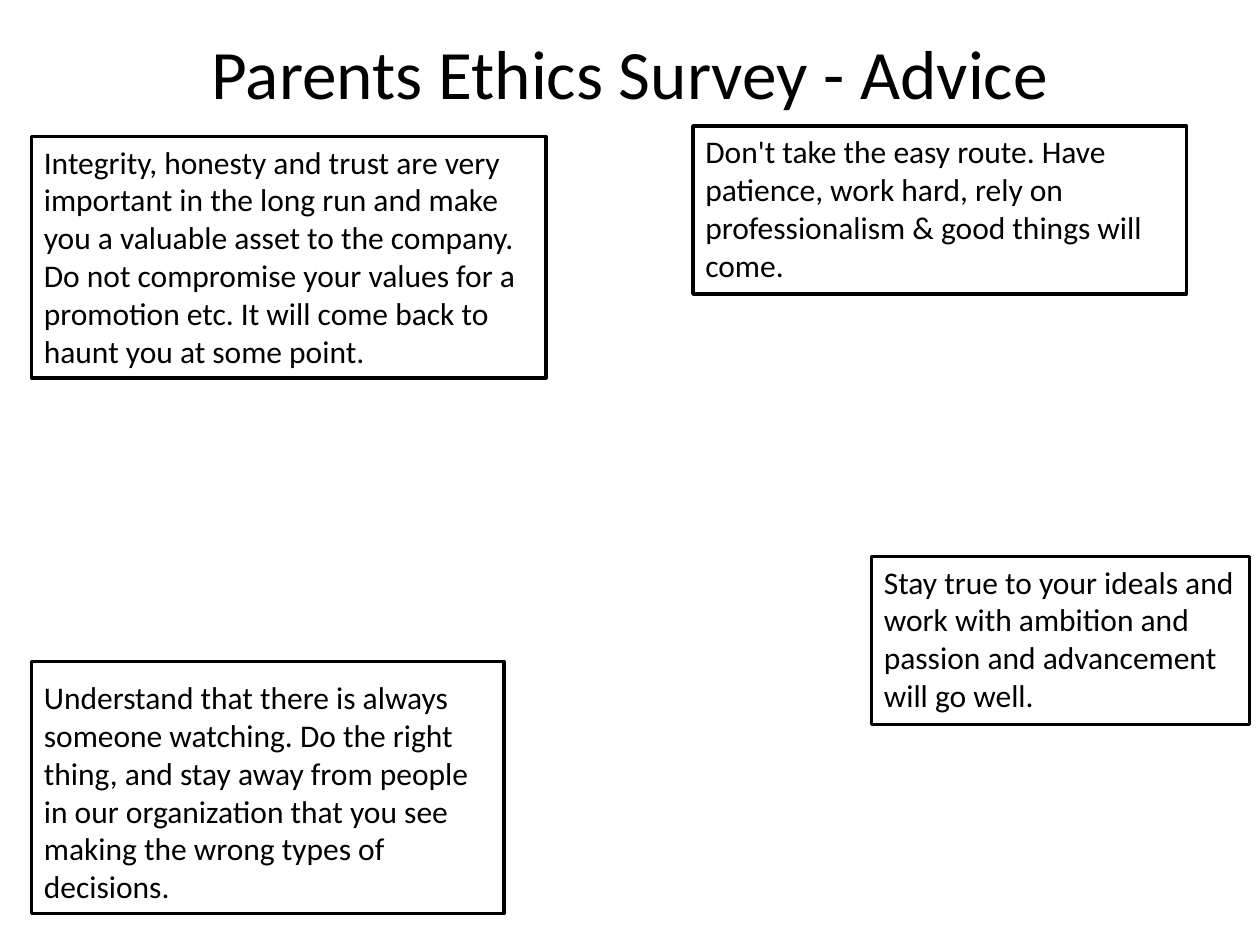
"""Build the Parents Ethics Survey advice slide."""
from dataclasses import dataclass

from pptx import Presentation
from pptx.dml.color import RGBColor
from pptx.enum.shapes import MSO_SHAPE
from pptx.enum.text import MSO_ANCHOR, MSO_AUTO_SIZE, PP_ALIGN
from pptx.util import Pt

RECTANGLE = MSO_SHAPE.RECTANGLE
MIDDLE = MSO_ANCHOR.MIDDLE
LEFT, CENTER = PP_ALIGN.LEFT, PP_ALIGN.CENTER
NO_FIT, GROW = MSO_AUTO_SIZE.NONE, MSO_AUTO_SIZE.SHAPE_TO_FIT_TEXT
EMU_PER_PX = 7620
PAGE_SIZE = (1200, 900)
TITLE = "Parents Ethics Survey - Advice"
TITLE_AREA = (60, 36, 1080, 64)

ADVICE = [
    {
        "text": "Integrity, honesty and trust are very important in the long run and make "
                "you a valuable asset to the company. Do not compromise your values for a "
                "promotion etc. It will come back to haunt you at some point.",
        "text_area": (30, 130, 490, 230),
        "frame_area": (30, 130, 490, 230),
    },
    {
        "text": "Don't take the easy route. Have patience, work hard, rely on "
                "professionalism & good things will come.",
        "text_area": (660, 120, 470, 157),
        "frame_area": (660, 120, 470, 160),
    },
    {
        "text": "Stay true to your ideals and work with ambition and passion and "
                "advancement will go well.",
        "text_area": (830, 530, 360, 157),
        "frame_area": (830, 530, 360, 160),
    },
    {
        "text": "Understand that there is always someone watching. Do the right thing, "
                "and stay away from people in our organization that you see making the "
                "wrong types of decisions.",
        "text_area": (30, 640, 440, 230),
        "frame_area": (30, 630, 450, 240),
    },
]


@dataclass(frozen=True)
class Theme:
    """Colours, font and sizes of the slide."""
    ink: RGBColor = RGBColor(0, 0, 0)
    font: str = "Calibri"
    title_size: float = 39.6
    body_size: float = 18
    line_width: float = 2


THEME = Theme()


def scale(lengths):
    """Turn px lengths into EMU."""
    return [length * EMU_PER_PX for length in lengths]


def write(frame, text, size, alignment, fit):
    """Put one formatted run into a text frame."""
    frame.word_wrap = True
    frame.auto_size = fit
    para = frame.paragraphs[0]
    para.alignment = alignment
    span = para.add_run()
    span.text = text
    span.font.name = THEME.font
    span.font.size = Pt(size)
    span.font.color.rgb = THEME.ink


def add_title(page):
    """Place and fill the title placeholder."""
    title = page.shapes.title
    title.left, title.top, title.width, title.height = scale(TITLE_AREA)
    title.text_frame.vertical_anchor = MIDDLE
    write(title.text_frame, TITLE, THEME.title_size, CENTER, NO_FIT)


def add_advice(page, text, text_area, frame_area):
    """Add one piece of advice with its outline."""
    box = page.shapes.add_textbox(*scale(text_area))
    write(box.text_frame, text, THEME.body_size, LEFT, GROW)
    outline = page.shapes.add_shape(RECTANGLE, *scale(frame_area))
    outline.shadow.inherit = False
    outline.fill.background()
    outline.line.color.rgb = THEME.ink
    outline.line.width = Pt(THEME.line_width)


def main():
    """Build and save the deck."""
    deck = Presentation()
    deck.slide_width, deck.slide_height = scale(PAGE_SIZE)
    page = deck.slides.add_slide(deck.slide_layouts.get_by_name("Title Only"))
    add_title(page)
    for advice in ADVICE:
        add_advice(page, **advice)
    deck.save("out.pptx")


if __name__ == "__main__":
    main()
